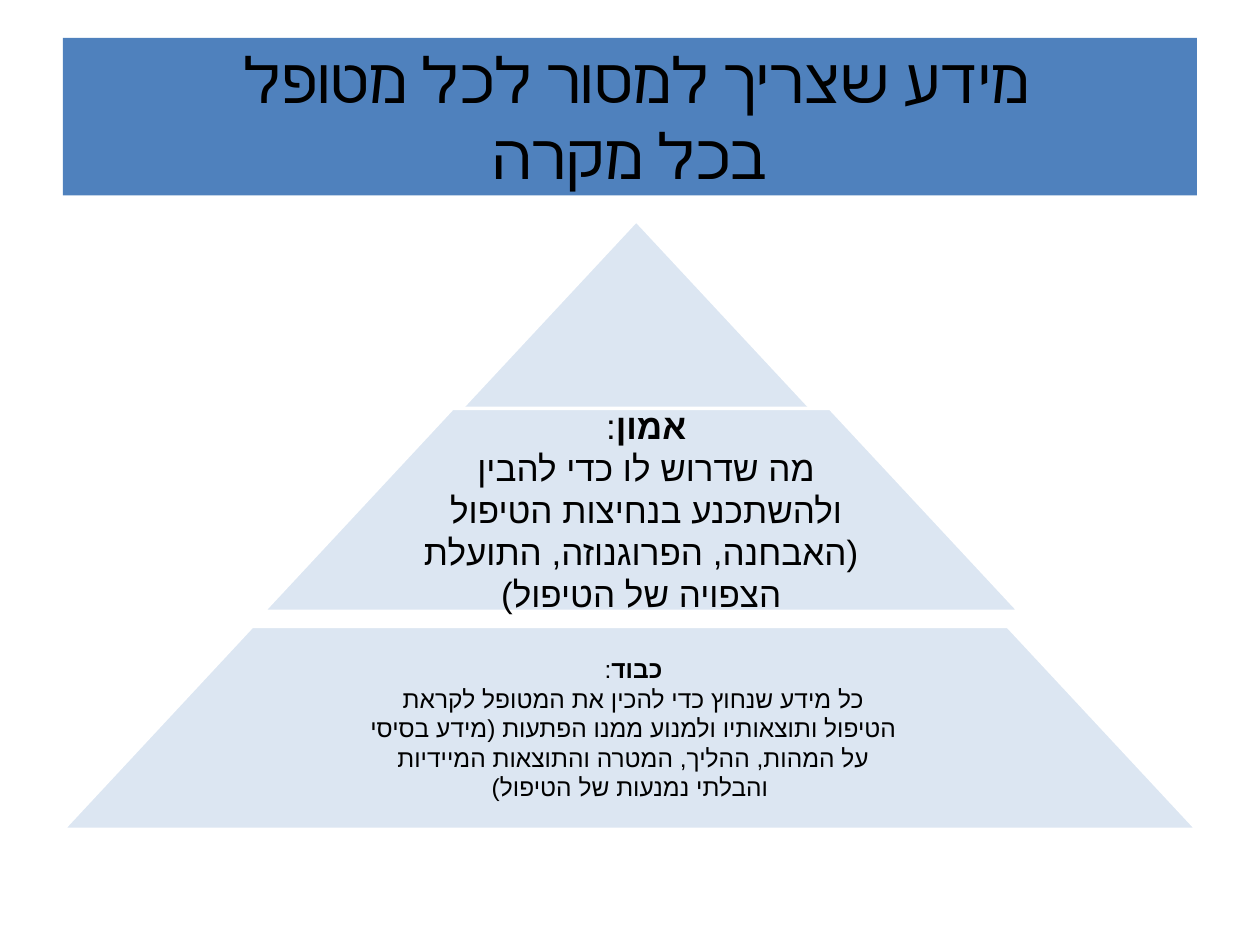
import dataclasses

import pptx
import pptx.dml.color
import pptx.enum.shapes
import pptx.enum.text
import pptx.oxml
import pptx.util

Pt = pptx.util.Pt
RGB = pptx.dml.color.RGBColor.from_string
CENTER = pptx.enum.text.PP_ALIGN.CENTER
SHAPE = pptx.enum.shapes.MSO_SHAPE
NS = "http://schemas.openxmlformats.org/drawingml/2006/main"


@dataclasses.dataclass(frozen=True)
class Theme:
    """Colours, fonts and type sizes of the slide."""
    banner: str = "4F81BD"
    tier: str = "DCE6F2"
    edge: str = "FFFFFF"
    text: str = "000000"
    title_font: str = "Calibri"
    body_font: str = "Arial"
    title_size: int = 36
    trust_size: int = 20
    respect_size: int = 14


THEME = Theme()
TITLE = [[("מידע שצריך למסור לכל מטופל \vבכל מקרה", False)]]
TRUST = [
    [("אמון", True), (": ", False)],
    [("מה שדרוש לו כדי להבין ", False)],
    [("ולהשתכנע בנחיצות הטיפול ", False)],
    [("(האבחנה, הפרוגנוזה, התועלת הצפויה של הטיפול)", False)],
]
RESPECT = [
    [("כבוד", True), (": ", False)],
    [("כל מידע שנחוץ כדי להכין את המטופל לקראת ", False)],
    [("הטיפול ותוצאותיו ולמנוע ממנו הפתעות (מידע בסיסי ", False)],
    [("על המהות, ההליך, המטרה והתוצאות המיידיות ", False)],
    [("והבלתי נמנעות של הטיפול)", False)],
]


def set_attrs(obj, values):
    """Set each named attribute on an object."""
    for name, value in values.items():
        setattr(obj, name, value)


def write_text(sp, paragraphs, font, size, margin):
    """Fill a shape with centred right-to-left paragraphs of (text, bold) runs."""
    tf = sp.text_frame
    set_attrs(tf, {
        "word_wrap": True,
        "vertical_anchor": pptx.enum.text.MSO_ANCHOR.MIDDLE,
        "margin_left": margin, "margin_right": margin,
        "margin_top": margin, "margin_bottom": margin,
    })
    for i, runs in enumerate(paragraphs):
        p = tf.add_paragraph() if i else tf.paragraphs[0]
        p.alignment = CENTER
        p._p.get_or_add_pPr().set("rtl", "1")
        for k, line in enumerate(runs):
            text, bold = line
            for n, part in enumerate(text.split("\v")):
                if n:
                    p.add_line_break()
                r = p.add_run()
                r.text = part
                set_attrs(r.font, {"name": font, "size": Pt(size), "bold": bold})
                r.font.color.rgb = RGB(THEME.text)
                r._r.get_or_add_rPr().append(
                    pptx.oxml.parse_xml(f'<a:cs xmlns:a="{NS}" typeface="{font}"/>'))


def add_filled(s, kind, box, fill):
    """Add a flat preset shape without a line."""
    sp = s.shapes.add_shape(kind, *map(Pt, box))
    sp.shadow.inherit = False
    sp.fill.solid()
    sp.fill.fore_color.rgb = RGB(fill)
    sp.line.fill.background()
    return sp


def add_banner(s, box):
    """Draw the title banner in the given box."""
    sp = add_filled(s, SHAPE.RECTANGLE, box, THEME.banner)
    write_text(sp, TITLE, THEME.title_font, THEME.title_size, Pt(4))


def add_pyramid(s, box):
    """Draw three stacked tiers with their texts in the given box."""
    left, top, width, height = box
    centre, step, tier_h = left + width / 2, width / 3, height / 3
    tiers = [
        (3.6, -8.6, None, 0),
        (6.5, 0, TRUST, THEME.trust_size),
        (0, 0, RESPECT, THEME.respect_size),
    ]
    for i, (shift, drop, paragraphs, size) in enumerate(tiers):
        w = step * (i + 1)
        y = top + tier_h * i - (8.6 if i == 1 else 0)
        x = centre + (shift if i < 2 else 0) - w / 2
        sp = add_filled(s, SHAPE.TRAPEZOID, (x, y, w, tier_h), THEME.tier)
        sp.adjustments[0] = step / 2 / tier_h
        sp.line.color.rgb = RGB(THEME.edge)
        sp.line.width = Pt(2)
        if paragraphs:
            text_w = w * 0.65
            tb = s.shapes.add_textbox(
                *map(Pt, (x + (w - text_w) / 2, y, text_w, tier_h)))
            write_text(tb, paragraphs, THEME.body_font, size, Pt(2))


def main():
    """Build the slide and save it."""
    prs = pptx.Presentation()
    set_attrs(prs, {"slide_width": Pt(720), "slide_height": Pt(540)})
    s = prs.slides.add_slide(prs.slide_layouts[6])
    add_banner(s, (36, 21.6, 648, 90))
    add_pyramid(s, (36, 126, 648, 348))
    prs.save("out.pptx")


if __name__ == "__main__":
    main()
